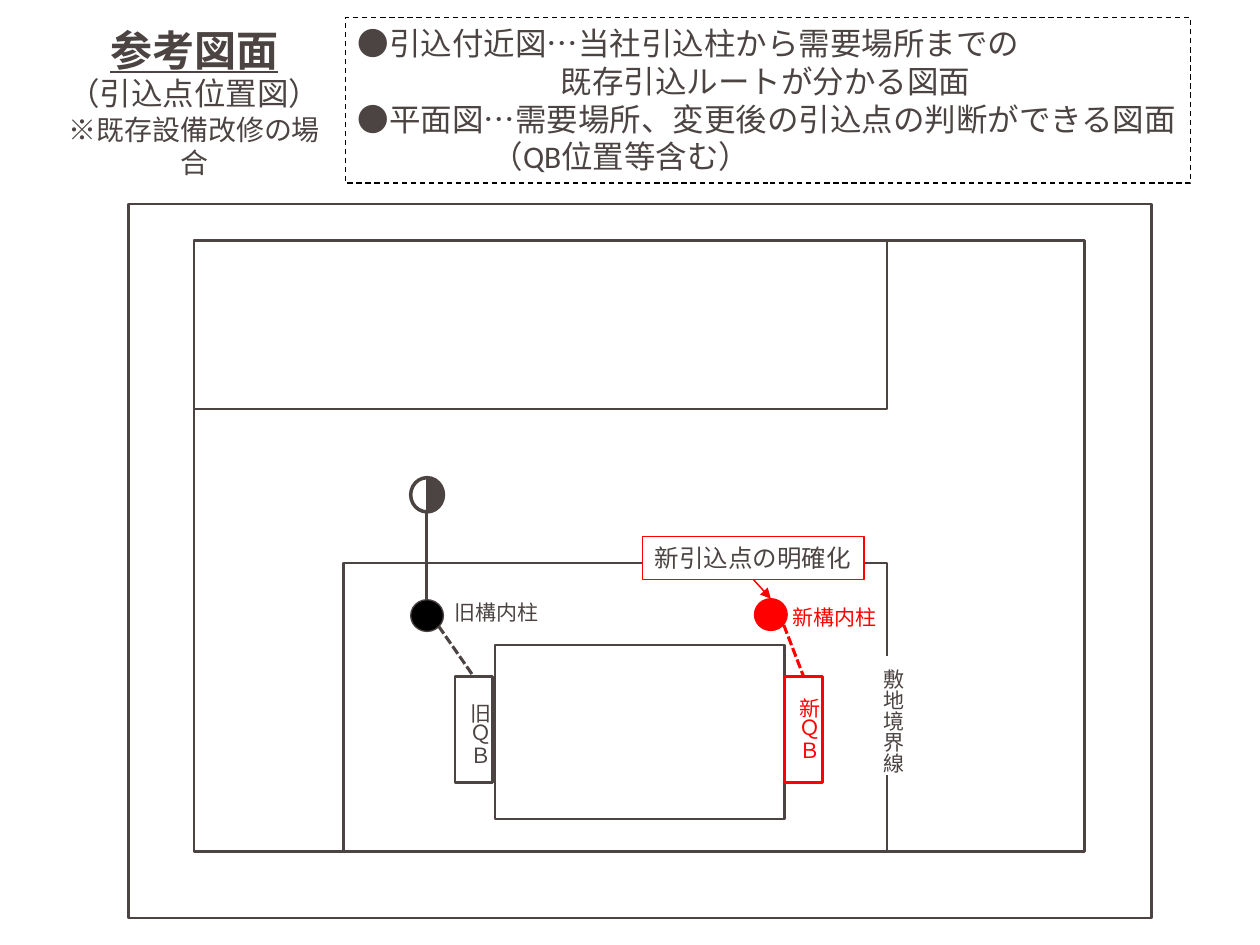
from lxml.etree import SubElement
from pptx import Presentation
from pptx.dml.color import RGBColor
from pptx.enum.dml import MSO_LINE
from pptx.enum.shapes import MSO_CONNECTOR, MSO_SHAPE
from pptx.enum.text import MSO_ANCHOR, PP_ALIGN
from pptx.oxml.ns import qn
from pptx.util import Cm, Pt

GRAY, RED, BLACK, WHITE = "4C4443", "FF0000", "000000", "FFFFFF"
LATIN, JAPANESE = "Calibri", "Noto Sans CJK JP"

# Boxes are left, top, width, height in centimetres.
TITLE_BOX = (0.86, 0.36, 6.12, 2.74)
TITLE = [  # text, size, font, emphasised
    ("参考図面", 24, LATIN, True),
    ("（引込点位置図）", 18, LATIN, False),
    ("※既存設備改修の場合", 16, JAPANESE, False),
]
NOTES_BOX = (6.96, 0.36, 17.04, 3.33)
NOTES = [  # text, left indent
    ("●引込付近図…当社引込柱から需要場所までの", 0),
    ("既存引込ルートが分かる図面", 4.1),
    ("●平面図…需要場所、変更後の引込点の判断ができる図面", 0),
    ("（QB位置等含む）", 2.7),
]
OUTLINES = [
    (2.59, 4.11, 20.62, 14.4),  # whole drawing
    (3.91, 4.85, 13.97, 3.4),  # neighbouring plot
    (3.91, 4.85, 17.96, 12.32),  # block
    (6.93, 11.35, 10.95, 5.82),  # customer site
    (9.98, 13, 5.84, 3.51),  # building
]
UTILITY_POLE_BOX = (8.28, 9.63, 0.66, 0.69)
UTILITY_POLE_HALF_BOX = (8.26, 9.65, 0.69, 0.66)
SERVICE_LINE = ((8.59, 10.31), (8.59, 12.09))
BOUNDARY_BOX = (17.37, 13.23, 1.02, 2.39)
CALLOUT_BOX = (12.95, 10.82, 4.47, 0.86)
NEW_POINT = (15.54, 12.07)
SERVICES = [
    dict(color=GRAY, pole=(8.28, 12.09, 0.66, 0.64), pole_fill=BLACK,
         pole_name="旧構内柱", pole_label=(8.92, 11.96, 3.3, 0.76),
         cubicle=(9.17, 13.64, 0.76, 2.13), cubicle_name="旧ＱＢ",
         cubicle_label=(9.04, 13.92, 1.02, 2.06), cable_start=(8.84, 12.62)),
    dict(color=RED, pole=(15.21, 12.07, 0.66, 0.64), pole_fill=RED,
         pole_name="新構内柱", pole_label=(15.72, 12.07, 3.3, 0.76),
         cubicle=(15.82, 13.64, 0.76, 2.13), cubicle_name="新ＱＢ",
         cubicle_label=(15.67, 13.82, 1.02, 2.06), cable_start=(15.8, 12.6)),
]

presentation = Presentation()
presentation.slide_width, presentation.slide_height = Cm(25.4), Cm(19.05)
slide = presentation.slides.add_slide(presentation.slide_layouts[6])


def rgb(color):
    return RGBColor.from_string(color)


def add_shape(kind, box, line=None, width=1.5, fill=None):
    shape = slide.shapes.add_shape(kind, *map(Cm, box))
    shape.shadow.inherit = False
    if fill:
        shape.fill.solid()
        shape.fill.fore_color.rgb = rgb(fill)
    else:
        shape.fill.background()
    if line:
        shape.line.color.rgb = rgb(line)
        shape.line.width = Pt(width)
    else:
        shape.line.fill.background()
    return shape


def add_textbox(box):
    return slide.shapes.add_textbox(*map(Cm, box))


def format_paragraph(paragraph, size, color=GRAY, font=LATIN, align=PP_ALIGN.LEFT):
    paragraph.alignment = align
    for run in paragraph.runs:
        run.font.size = Pt(size)
        run.font.name = font
        run.font.color.rgb = rgb(color)


def write(shape, lines, size=12, color=GRAY, font=LATIN, vertical=False):
    """Fill the shape with left-aligned lines and return its paragraphs."""
    frame = shape.text_frame
    frame.word_wrap = True
    frame.vertical_anchor = MSO_ANCHOR.TOP
    frame.text = "\n".join(lines)
    if vertical:
        frame._txBody.bodyPr.set("vert", "eaVert")
    for paragraph in frame.paragraphs:
        format_paragraph(paragraph, size, color, font)
    return frame.paragraphs


def add_line(start, end, color, width=1.75):
    line = slide.shapes.add_connector(MSO_CONNECTOR.STRAIGHT, *map(Cm, start + end))
    line.line.color.rgb = rgb(color)
    line.line.width = Pt(width)
    SubElement(line._element.spPr, qn("a:effectLst"))
    return line


def top_middle(box):
    left, top, width, _ = box
    return left + width / 2, top


def bottom_middle(box):
    left, top, width, height = box
    return left + width / 2, top + height


# Heading and explanation
title_paragraphs = write(add_textbox(TITLE_BOX), [row[0] for row in TITLE])
for paragraph, (_, size, font, emphasised) in zip(title_paragraphs, TITLE):
    format_paragraph(paragraph, size, font=font, align=PP_ALIGN.CENTER)
    paragraph.runs[0].font.bold = emphasised
    paragraph.runs[0].font.underline = emphasised

notes = add_shape(MSO_SHAPE.RECTANGLE, NOTES_BOX, BLACK, 0.75)
notes.line.dash_style = MSO_LINE.DASH
for paragraph, (_, indent) in zip(write(notes, [row[0] for row in NOTES], 18), NOTES):
    paragraph._p.get_or_add_pPr().set("marL", str(Cm(indent)))

# Site plan
for box in OUTLINES:
    add_shape(MSO_SHAPE.RECTANGLE, box, GRAY)

add_shape(MSO_SHAPE.OVAL, UTILITY_POLE_BOX, GRAY, 2)
pole_half = add_shape(MSO_SHAPE.PIE, UTILITY_POLE_HALF_BOX, GRAY, 0.75, GRAY)
pole_half.adjustments[0], pole_half.adjustments[1] = 0, 108.33
pole_half.rotation = 270

boundary = add_shape(MSO_SHAPE.RECTANGLE, BOUNDARY_BOX, fill=WHITE)
write(boundary, ["敷地境界線"], vertical=True)
boundary.text_frame.word_wrap = False

# Old and new service equipment
for service in SERVICES:
    color = service["color"]
    cubicle = add_shape(MSO_SHAPE.RECTANGLE, service["cubicle"], color)
    write(add_textbox(service["cubicle_label"]), [service["cubicle_name"]],
          color=color, vertical=True)
    add_shape(MSO_SHAPE.OVAL, service["pole"], color, 0.75, service["pole_fill"])
    write(add_textbox(service["pole_label"]), [service["pole_name"]], color=color)
    cable = add_line(service["cable_start"], top_middle(service["cubicle"]), color)
    cable.line.dash_style = MSO_LINE.SQUARE_DOT
    cable.end_connect(cubicle, 0)

add_line(*SERVICE_LINE, GRAY)

# Callout for the new service point
callout = add_shape(MSO_SHAPE.RECTANGLE, CALLOUT_BOX, RED, 0.75, WHITE)
write(callout, ["新引込点の明確化"], 14, font=JAPANESE)
arrow = add_line(bottom_middle(CALLOUT_BOX), NEW_POINT, RED, 0.85)
arrow.begin_connect(callout, 2)
SubElement(arrow.line._get_or_add_ln(), qn("a:tailEnd"), type="triangle")

presentation.save("out.pptx")
